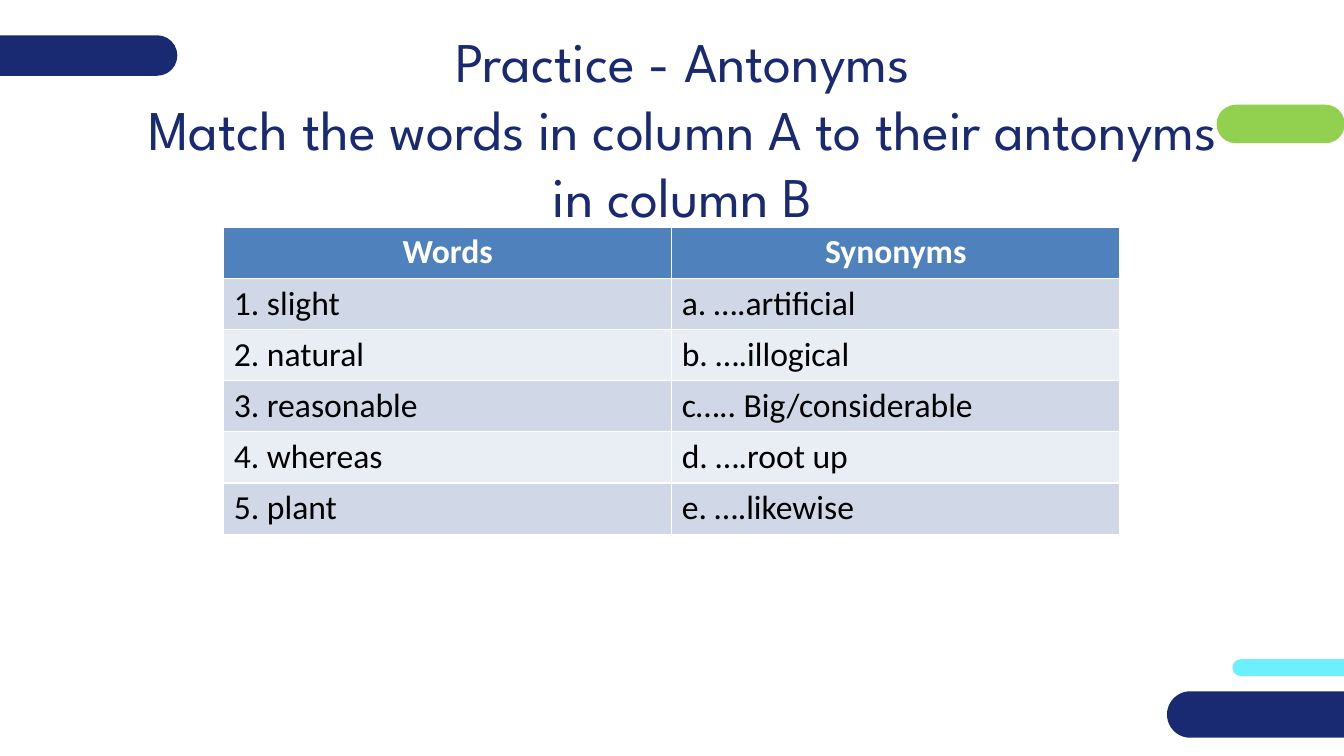
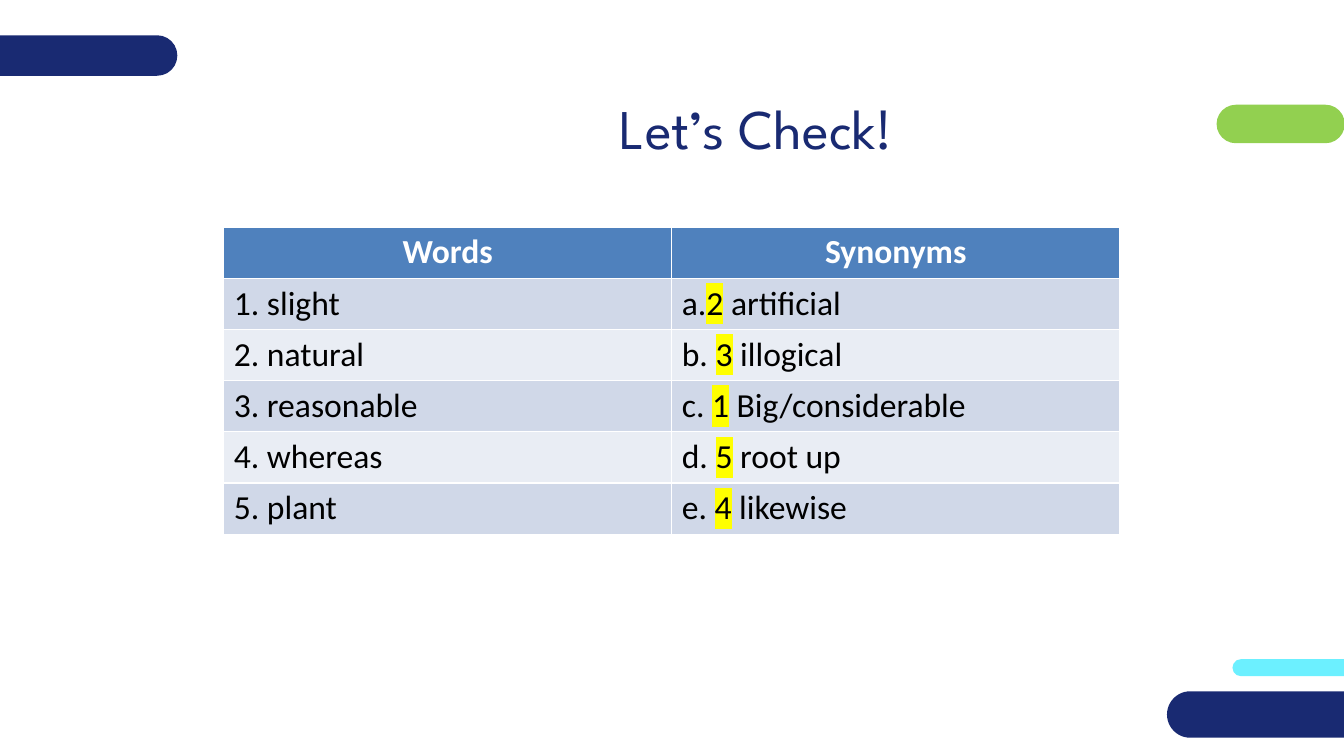
"""Build two slides on matching antonyms: the task and its answers."""
from dataclasses import dataclass

from lxml.etree import SubElement
from pptx import Presentation
from pptx.dml.color import RGBColor
from pptx.enum.shapes import MSO_SHAPE
from pptx.enum.text import MSO_ANCHOR, MSO_AUTO_SIZE, PP_ALIGN
from pptx.oxml.ns import qn
from pptx.slide import Slide, SlideLayout
from pptx.table import _Cell
from pptx.util import Cm, Pt

NAVY = RGBColor(0x19, 0x2A, 0x72)
CYAN = RGBColor(0x6C, 0xF0, 0xFF)
GREEN = RGBColor(0x92, 0xD0, 0x50)
BLUE = RGBColor(0x4F, 0x81, 0xBD)
DARK = RGBColor(0xD0, 0xD8, 0xE8)
LIGHT = RGBColor(0xE9, 0xED, 0xF4)
WHITE = RGBColor(0xFF, 0xFF, 0xFF)
BLACK = RGBColor(0x00, 0x00, 0x00)
YELLOW = RGBColor(0xFF, 0xFF, 0x00)


@dataclass(frozen=True)
class Band:
    """A rounded bar, in centimetres."""
    left: float
    top: float
    width: float
    height: float
    color: RGBColor


@dataclass(frozen=True)
class Page:
    """A slide's title, its left edge and its right column; bars enclose marked text."""
    title: str
    left: float
    top: float
    pairs: tuple[str, ...]


BANDS = (
    Band(31.06, 16.61, 4.42, 0.43, CYAN),
    Band(30.66, 2.64, 3.23, 0.97, GREEN),
    Band(-1.35, 0.89, 5.82, 1.02, NAVY),
    Band(29.41, 17.42, 6.1, 1.17, NAVY),
)
HEADS = ("Words", "Synonyms")
WORDS = ("slight", "natural", "reasonable", "whereas", "plant")
PAGES = (
    Page(
        "Practice - Antonyms\vMatch the words in column A to their antonyms in column B",
        2.97, 0.53,
        ("a. ….artificial", "b. ….illogical", "c….. Big/considerable",
         "d. ….root up", "e. ….likewise"),
    ),
    Page(
        "Let’s Check!", 4.83, 0.51,
        ("a.|2| artificial", "b. |3| illogical", "c. |1| Big/considerable",
         "d. |5| root up", "e. |4| likewise"),
    ),
)


def add_bands(slide: Slide, layout: SlideLayout) -> None:
    """Draw the bands and move them to the layout that the slides share."""
    for holder in list(layout.placeholders)[1:]:
        layout.shapes.element.remove(holder.element)
    shapes = []
    for band in BANDS:
        shape = slide.shapes.add_shape(
            MSO_SHAPE.ROUNDED_RECTANGLE,
            Cm(band.left), Cm(band.top), Cm(band.width), Cm(band.height))
        shape.adjustments[0] = 0.5
        shape.shadow.inherit = False
        shape.fill.solid()
        shape.fill.fore_color.rgb = band.color
        shape.line.fill.background()
        shapes.append(shape)
    for shape in shapes:
        layout.shapes.element.append(shape.element)


def set_title(slide: Slide, page: Page) -> None:
    """Place and format the title."""
    title = slide.shapes.title
    title.left, title.top = Cm(page.left), Cm(page.top)
    title.width, title.height = Cm(28.47), Cm(5.38)
    frame = title.text_frame
    frame.text = page.title
    frame.word_wrap = True
    frame.auto_size = MSO_AUTO_SIZE.NONE
    frame.vertical_anchor = MSO_ANCHOR.MIDDLE
    line = frame.paragraphs[0]
    line.alignment = PP_ALIGN.CENTER
    line.font.name = "League Spartan"
    line.font.size = Pt(40)
    line.font.color.rgb = NAVY


def fill_cell(cell: _Cell, text: str, row: int) -> None:
    """Write a cell, with each part between bars marked in yellow."""
    head = row == 0
    cell.fill.solid()
    cell.fill.fore_color.rgb = BLUE if head else DARK if row % 2 else LIGHT
    line = cell.text_frame.paragraphs[0]
    line.alignment = PP_ALIGN.CENTER if head else PP_ALIGN.LEFT
    line.font.name = "Calibri"
    line.font.size = Pt(24)
    line.font.bold = head
    line.font.color.rgb = WHITE if head else BLACK
    for spot, part in enumerate(text.split("|")):
        run = line.add_run()
        run.text = part
        if spot % 2:
            mark = SubElement(run.font._element, qn("a:highlight"))
            SubElement(mark, qn("a:srgbClr"), val=str(YELLOW))


def add_grid(slide: Slide, page: Page) -> None:
    """Add the table of words and their matches."""
    words = (f"{count}. {word}" for count, word in enumerate(WORDS, 1))
    rows = (HEADS, *zip(words, page.pairs))
    table = slide.shapes.add_table(
        len(rows), len(HEADS),
        Cm(5.64), Cm(5.72), Cm(22.58), Cm(1.29 * len(rows))).table
    for row, texts in enumerate(rows):
        for col, text in enumerate(texts):
            fill_cell(table.cell(row, col), text, row)


def main() -> None:
    """Build and save the slides."""
    deck = Presentation()
    deck.slide_width, deck.slide_height = Cm(33.87), Cm(19.05)
    layout = deck.slide_layouts[5]
    for count, page in enumerate(PAGES):
        slide = deck.slides.add_slide(layout)
        if count == 0:
            add_bands(slide, layout)
        set_title(slide, page)
        add_grid(slide, page)
    deck.save("out.pptx")


if __name__ == "__main__":
    main()
